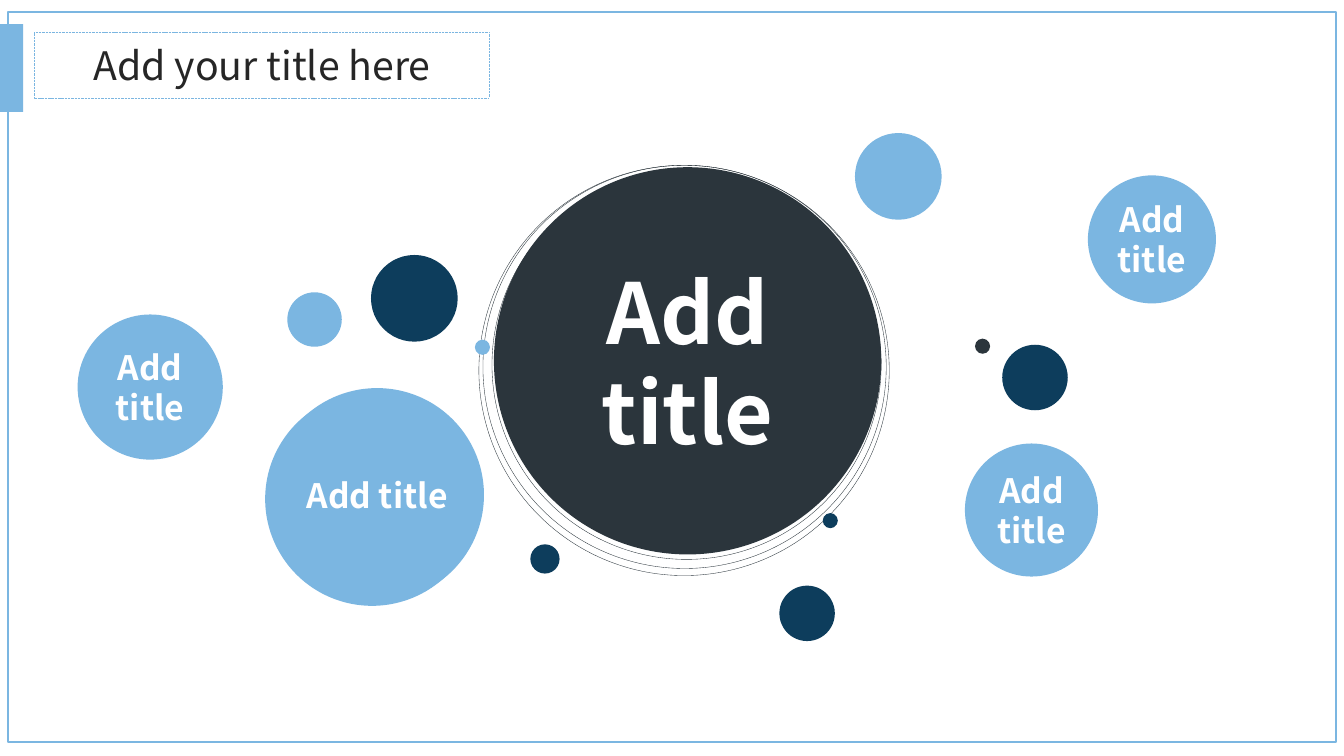
from pptx import Presentation
from pptx.dml.color import RGBColor
from pptx.enum.dml import MSO_LINE_DASH_STYLE as Dash
from pptx.enum.shapes import MSO_SHAPE as Shape
from pptx.enum.text import MSO_ANCHOR as Anchor, MSO_AUTO_SIZE as AutoSize, PP_ALIGN as Align
from pptx.util import Inches, Pt

FONT = "Noto Sans CJK JP"
SKY, NAVY, SLATE, WHITE, INK = "7BB6E1", "0D3D5C", "2B353C", "FFFFFF", "262626"


def color(value):
    return RGBColor.from_string(value)


def add_shape(page, kind, box, fill=None, line=None, width=0.25):
    """Add a flat shape; box is left, top, width, height in inches."""
    shape = page.shapes.add_shape(kind, *map(Inches, box))
    shape.shadow.inherit = False
    if fill:
        shape.fill.solid()
        shape.fill.fore_color.rgb = color(fill)
    else:
        shape.fill.background()
    if line:
        shape.line.color.rgb = color(line)
        shape.line.width = Pt(width)
    else:
        shape.line.fill.background()
    return shape


def write(shape, text, size, ink=WHITE, bold=True, **frame_format):
    frame = shape.text_frame
    for name, value in {"word_wrap": True, "vertical_anchor": Anchor.MIDDLE, **frame_format}.items():
        setattr(frame, name, value)
    para = frame.paragraphs[0]
    para.alignment = Align.CENTER
    span = para.add_run()
    span.text = text
    for name, value in {"name": FONT, "size": Pt(size), "bold": bold}.items():
        setattr(span.font, name, value)
    span.font.color.rgb = color(ink)


def add_circle(page, box, x, y, size, fill=None, **line_format):
    """Add a circle at an offset from the corner of box."""
    return add_shape(page, Shape.OVAL, (box[0] + x, box[1] + y, size, size), fill, **line_format)


def add_hub(page, box):
    """Add the large central circle."""
    hub = add_circle(page, box, 0.21, 0.04, 3.8, SLATE, line=SLATE, width=3)
    write(hub, "Add title", 60)


def add_rings(page, box):
    for x, y, size in [(0.17, 0.05, 3.86), (0.04, 0, 4.07), (0.08, 0, 4)]:
        add_circle(page, box, x, y, size, line=SLATE)


def add_labelled_bubbles(page, box):
    add_circle(page, box, 1.86, 2.57, 2.12, SKY)
    margins = {f"margin_{side}": 0 for side in ("left", "top", "right", "bottom")}
    for x, y, size in [(0, 1.8, 1.44), (1.91, 2.53, 2.12), (10.02, 0.42, 1.27), (8.8, 3.08, 1.32)]:
        bubble = add_circle(page, box, x, y, size, SKY)
        write(bubble, "Add title", 24, **margins)


def add_plain_bubbles(page, box):
    for x, y, size, fill in [
        (2.08, 1.58, 0.54, SKY),
        (2.91, 1.21, 0.86, NAVY),
        (7.71, 0, 0.86, SKY),
        (4.49, 4.08, 0.29, NAVY),
        (3.94, 2.05, 0.15, SKY),
        (8.9, 2.04, 0.15, SLATE),
        (9.17, 2.1, 0.65, NAVY),
        (6.96, 4.49, 0.55, NAVY),
        (7.39, 3.77, 0.15, NAVY),
    ]:
        add_circle(page, box, x, y, size, fill)


def add_title(page, box):
    """Add the side tab and the dashed title box."""
    left, top, width, height = box
    border = add_shape(page, Shape.RECTANGLE, (left + 0.34, top + 0.08, width - 0.34, 0.65), WHITE, SKY)
    border.line.dash_style = Dash.SQUARE_DOT
    title = add_shape(page, Shape.RECTANGLE, (left + 0.71, top + 0.12, 3.78, 0.57), WHITE)
    write(title, "Add your title here", 28, INK, False, word_wrap=False, auto_size=AutoSize.SHAPE_TO_FIT_TEXT)
    add_shape(page, Shape.RECTANGLE, (left, top, 0.23, height), SKY)


def main():
    deck = Presentation()
    deck.slide_width, deck.slide_height = Inches(13.33), Inches(7.5)
    page = deck.slides.add_slide(deck.slide_layouts[6])
    hub_box = (4.71 + 0.04 - 0.04, 1.64, 4.07, 4.07)
    bubble_box = (0.77, 1.32, 11.29, 5.04)
    add_hub(page, hub_box)
    add_labelled_bubbles(page, bubble_box)
    add_rings(page, hub_box)
    add_plain_bubbles(page, bubble_box)
    add_title(page, (0, 0.24, 4.85, 0.87))
    add_shape(page, Shape.RECTANGLE, (0.08, 0.12, 13.17, 7.24), line=SKY, width=1)
    deck.save("out.pptx")


if __name__ == "__main__":
    main()
